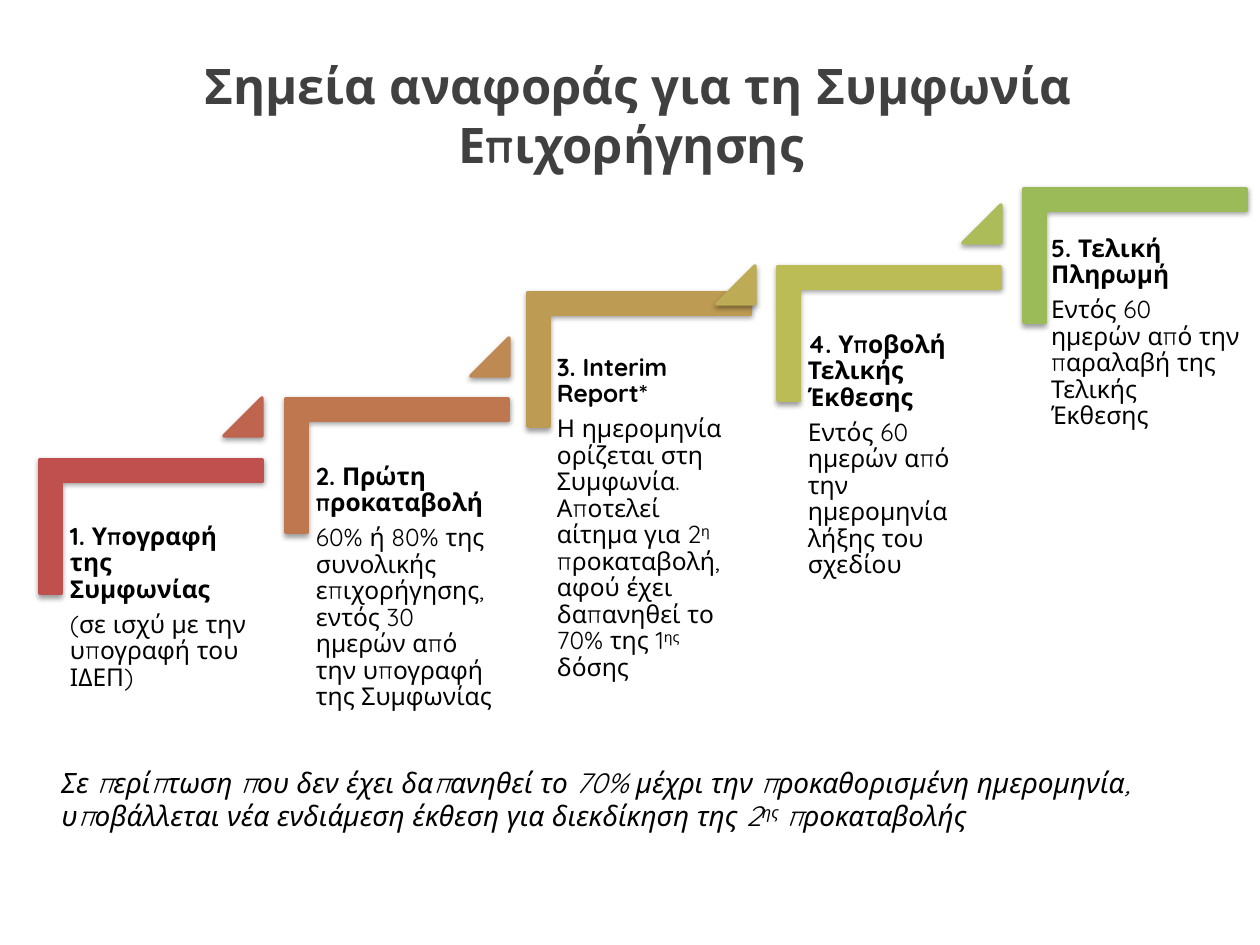
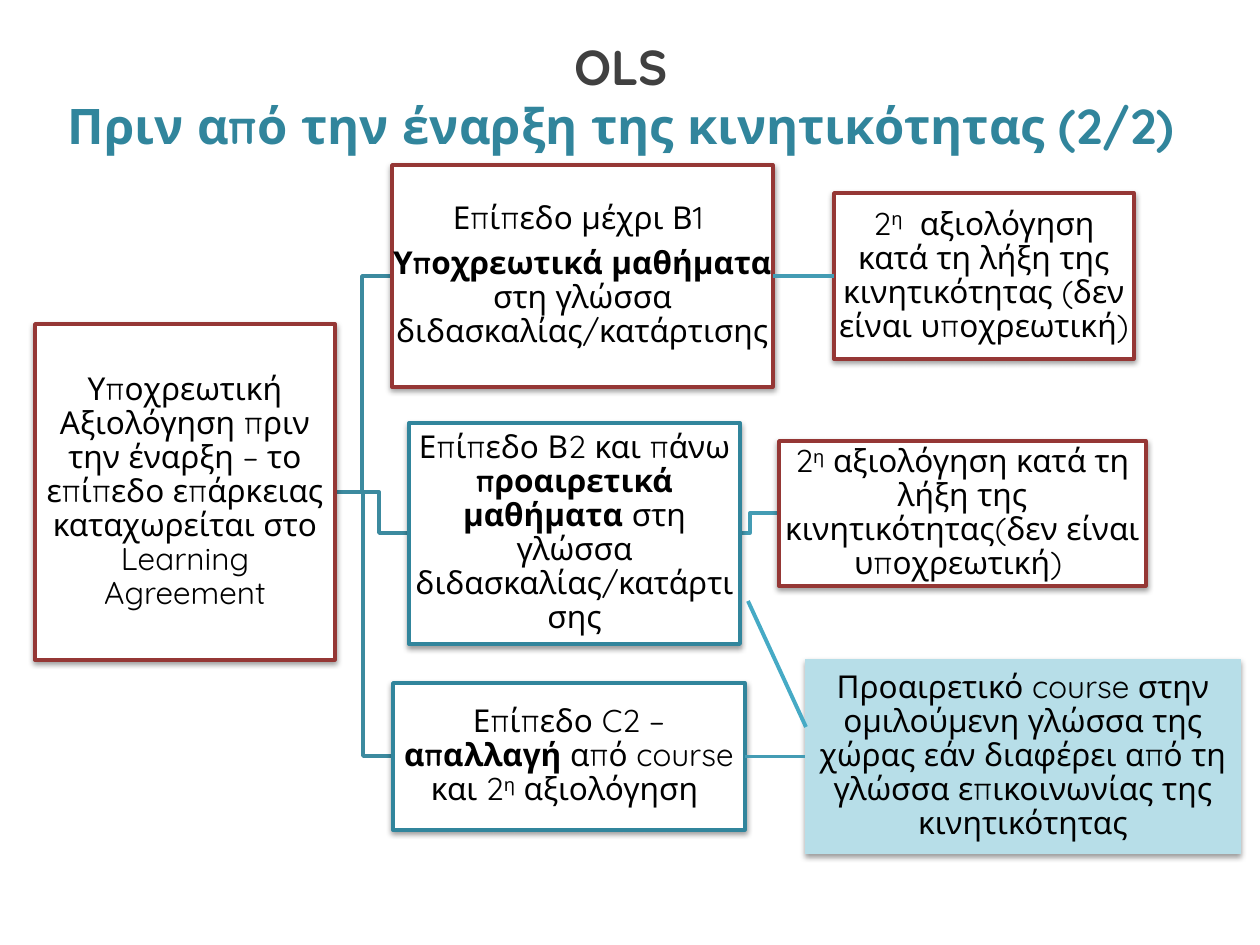
from dataclasses import dataclass
from typing import NamedTuple

from pptx import Presentation
from pptx.dml.color import RGBColor
from pptx.enum.shapes import MSO_CONNECTOR as Link, MSO_SHAPE as Kind
from pptx.enum.text import MSO_ANCHOR as Anchor, MSO_AUTO_SIZE as Fit, PP_ALIGN as Align
from pptx.oxml.xmlchemy import OxmlElement as Node
from pptx.util import Emu, Pt

SCALE = 914400 / 126  # EMU in one px
FONT = "Quicksand"
BLACK, WHITE, GREY = "000000", "FFFFFF", "404040"
RED, TEAL, PALE = "953735", "31859C", "B7DEE8"
NEAR, FAR, SLANT = "3C8A9F", "449CB4", "46AAC5"
BAR_W, BAR_L, TIP = 134, 223, 38


class Run(NamedTuple):
    text: str
    bold: bool = False
    sup: bool = False


class Area(NamedTuple):
    left: int
    top: int
    width: int
    height: int


@dataclass
class Step:
    left: int
    top: int
    tone: str
    text: Area
    head: str
    body: list[Run]


@dataclass
class Tip:
    left: int
    top: int
    tone: str


@dataclass
class Card:
    area: Area
    paras: list[list[Run]]
    edge: str = RED
    fill: str = WHITE
    weight: float = 2


@dataclass
class Bend:
    start: tuple[int, int]
    mid: int
    end: tuple[int, int]
    tone: str = NEAR


STEPS = [
    Step(84, 415, "C0504D", Area(62, 516, 200, 141), "1. Υπογραφή της Συμφωνίας",
         [Run("(σε ισχύ με την υπογραφή του ΙΔΕΠ)")]),
    Step(330, 354, "BF7750", Area(308, 456, 200, 141), "2. Πρώτη προκαταβολή",
         [Run("60% ή 80% της συνολικής επιχορήγησης, εντός 30 ημερών "
              "από την υπογραφή της Συμφωνίας")]),
    Step(572, 248, "BD9B53", Area(549, 347, 202, 163), "3. Interim Report*",
         [Run("Η ημερομηνία ορίζεται στη Συμφωνία. Αποτελεί αίτημα για 2"),
          Run("η", sup=True),
          Run(" προκαταβολή, αφού έχει δαπανηθεί το 70% της 1"),
          Run("ης", sup=True), Run(" δόσης")]),
    Step(822, 222, "BCBC56", Area(800, 324, 200, 141), "4. Υποβολή Τελικής Έκθεσης",
         [Run("Εντός 60 ημερών από την ημερομηνία λήξης του σχεδίου")]),
    Step(1068, 144, "9BBB59", Area(1043, 228, 205, 175), "5. Τελική Πληρωμή",
         [Run("Εντός 60 ημερών από την παραλαβή της Τελικής Έκθεσης")]),
]

TIPS = [Tip(224, 398, "BF644F"), Tip(471, 338, "BE8952"),
        Tip(717, 266, "BDAC55"), Tip(963, 205, "ABBC58")]

NOTE = [Run("Σε περίπτωση που δεν έχει δαπανηθεί το 70% μέχρι την προκαθορισμένη "
            "ημερομηνία, υποβάλλεται νέα ενδιάμεση έκθεση για διεκδίκηση της 2"),
        Run("ης", sup=True), Run(" προκαταβολής")]

CARDS = {
    "start": Card(Area(35, 324, 300, 336), [[
        Run("Υποχρεωτική Αξιολόγηση πριν την έναρξη – το επίπεδο επάρκειας "
            "καταχωρείται στο Learning Agreement")]]),
    "b1": Card(Area(392, 165, 381, 222), [
        [Run("Επίπεδο μέχρι Β1 ")],
        [Run("Υποχρεωτικά μαθήματα ", bold=True),
         Run("στη γλώσσα διδασκαλίας/κατάρτισης")]]),
    "b1 end": Card(Area(834, 193, 300, 166), [[
        Run("2"), Run("η", sup=True),
        Run("  αξιολόγηση κατά τη λήξη της κινητικότητας (δεν είναι υποχρεωτική)")]]),
    "b2": Card(Area(409, 423, 331, 221), [[
        Run("Επίπεδο Β2 και πάνω "), Run("προαιρετικά μαθήματα ", bold=True),
        Run("στη γλώσσα διδασκαλίας/κατάρτισης")]], TEAL, weight=2.25),
    "b2 end": Card(Area(779, 441, 367, 145), [[
        Run("2"), Run("η", sup=True),
        Run(" αξιολόγηση κατά τη λήξη της κινητικότητας(δεν είναι υποχρεωτική) ")]]),
    "c2": Card(Area(393, 683, 352, 147), [[
        Run("Επίπεδο C2 – "), Run("απαλλαγή", bold=True), Run(" από course και 2"),
        Run("η", sup=True), Run(" αξιολόγηση ")]], TEAL),
    "course": Card(Area(805, 659, 436, 195), [[
        Run("Προαιρετικό course στην ομιλούμενη γλώσσα της χώρας εάν διαφέρει "
            "από τη γλώσσα επικοινωνίας της κινητικότητας")]], "", PALE),
}

BENDS = [Bend((335, 492), 363, (393, 756)),
         Bend((335, 492), 379, (409, 533)),
         Bend((335, 492), 362, (392, 276)),
         Bend((740, 533), 750, (779, 513), FAR)]


def px(num: float) -> Emu:
    return Emu(round(num * SCALE))


def tint(code: str) -> RGBColor:
    return RGBColor.from_string(code)


def place(area: Area) -> list[Emu]:
    return [px(num) for num in area]


def style(para, size: int, tone: str = BLACK, bold: bool = False, slant: bool = False) -> None:
    font = para.font
    font.name, font.size = FONT, Pt(size)
    font.bold, font.italic = bold, slant
    font.color.rgb = tint(tone)


def write(para, runs: list[Run]) -> None:
    for item in runs:
        run = para.add_run()
        run.text = item.text
        if item.bold:
            run.font.bold = True
        if item.sup:
            run._r.get_or_add_rPr().set("baseline", "30000")


def inset(frame, gap: int) -> None:
    frame.word_wrap = True
    frame.margin_left = frame.margin_right = px(gap)
    frame.margin_top = frame.margin_bottom = px(gap)


def space(para, after: int) -> None:
    para.line_spacing = 0.9
    para.space_after = Pt(after)


def shade(shape) -> None:
    """Soft shadow straight below the shape."""
    shape.shadow.inherit = False
    cast = Node("a:outerShdw")
    for key, val in (("blurRad", 40000), ("dist", 20000), ("dir", 5400000), ("rotWithShape", 0)):
        cast.set(key, str(val))
    hue, alpha = Node("a:srgbClr"), Node("a:alpha")
    hue.set("val", BLACK)
    alpha.set("val", "38000")
    hue.append(alpha)
    cast.append(hue)
    shape._element.spPr.find(cast.tag.replace("outerShdw", "effectLst")).append(cast)


def solid(slide, kind: Kind, area: Area, fill: str, edge: str, weight: float = 2):
    shape = slide.shapes.add_shape(kind, *place(area))
    shape.fill.solid()
    shape.fill.fore_color.rgb = tint(fill)
    if edge:
        shape.line.color.rgb = tint(edge)
        shape.line.width = Pt(weight)
    else:
        shape.line.fill.background()
    shade(shape)
    return shape


def add_page(deck, area: Area):
    """New slide with an empty, styled title paragraph."""
    slide = deck.slides.add_slide(deck.slide_layouts[5])
    title = slide.shapes.title
    title.left, title.top, title.width, title.height = place(area)
    frame = title.text_frame
    frame.auto_size, frame.vertical_anchor = Fit.NONE, Anchor.MIDDLE
    para = frame.paragraphs[0]
    para.alignment = Align.CENTER
    style(para, 28, GREY, bold=True)
    return slide, para


def add_step(slide, step: Step) -> None:
    bar = solid(slide, Kind.CORNER, Area(step.left, step.top, BAR_W, BAR_L), step.tone, step.tone)
    bar.rotation = 90
    bar.adjustments[0] = bar.adjustments[1] = 0.16
    frame = slide.shapes.add_textbox(*place(step.text)).text_frame
    inset(frame, 8)
    head, body = frame.paragraphs[0], frame.add_paragraph()
    for para, runs, bold in ((head, [Run(step.head)], True), (body, step.body, False)):
        space(para, 5)
        style(para, 14, bold=bold)
        write(para, runs)


def add_tip(slide, tip: Tip) -> None:
    area = Area(tip.left, tip.top, TIP, TIP)
    solid(slide, Kind.ISOSCELES_TRIANGLE, area, tip.tone, tip.tone).adjustments[0] = 1


def add_card(slide, card: Card):
    shape = solid(slide, Kind.RECTANGLE, card.area, card.fill, card.edge, card.weight)
    frame = shape.text_frame
    inset(frame, 1)
    frame.vertical_anchor = Anchor.MIDDLE
    for num, runs in enumerate(card.paras):
        para = frame.add_paragraph() if num else frame.paragraphs[0]
        para.alignment = Align.CENTER
        space(para, 6)
        style(para, 18)
        write(para, runs)
    return shape


def add_bend(slide, bend: Bend) -> None:
    path = slide.shapes.build_freeform(*bend.start, scale=SCALE)
    turns = [(bend.mid, bend.start[1]), (bend.mid, bend.end[1]), bend.end]
    path.add_line_segments(turns, close=False)
    shape = path.convert_to_shape()
    shape.fill.background()
    shape.line.color.rgb = tint(bend.tone)
    shape.line.width = Pt(2)
    shape.shadow.inherit = False


def add_line(slide, ends: Area, tone: str, weight: float):
    """Straight line; ends holds x1, y1, x2, y2."""
    line = slide.shapes.add_connector(Link.STRAIGHT, *place(ends))
    line.line.color.rgb = tint(tone)
    line.line.width = Pt(weight)
    line._element.spPr.append(Node("a:effectLst"))
    return line


def add_join(slide, left, right) -> None:
    line = add_line(slide, Area(0, 0, 1, 1), FAR, 2)
    line.begin_connect(left, 3)
    line.end_connect(right, 1)


def stairs(deck) -> None:
    slide, title = add_page(deck, Area(64, 45, 1134, 139))
    write(title, [Run(" Σημεία αναφοράς για τη Συμφωνία Επιχορήγησης")])
    for num, step in enumerate(STEPS):
        add_step(slide, step)
        if num < len(TIPS):
            add_tip(slide, TIPS[num])
    # Note under the stairs
    frame = slide.shapes.add_textbox(*place(Area(49, 759, 1166, 81))).text_frame
    frame.word_wrap = True
    style(frame.paragraphs[0], 16, slant=True)
    write(frame.paragraphs[0], NOTE)


def levels(deck) -> None:
    slide, title = add_page(deck, Area(54, 16, 1134, 158))
    write(title, [Run("OLS")])
    title.add_line_break()
    write(title, [Run("Πριν από την έναρξη της κινητικότητας (2/2)")])
    title.runs[1].font.color.rgb = tint(TEAL)
    # Tree: bends lie under the cards
    for bend in BENDS:
        add_bend(slide, bend)
    cards = {name: add_card(slide, card) for name, card in CARDS.items()}
    add_join(slide, cards["b1"], cards["b1 end"])
    add_join(slide, cards["c2"], cards["course"])
    add_line(slide, Area(748, 601, 806, 727), SLANT, 2.25)


def main() -> None:
    deck = Presentation()
    deck.slide_width, deck.slide_height = px(1260), px(945)
    stairs(deck)
    levels(deck)
    deck.save("out.pptx")


if __name__ == "__main__":
    main()
